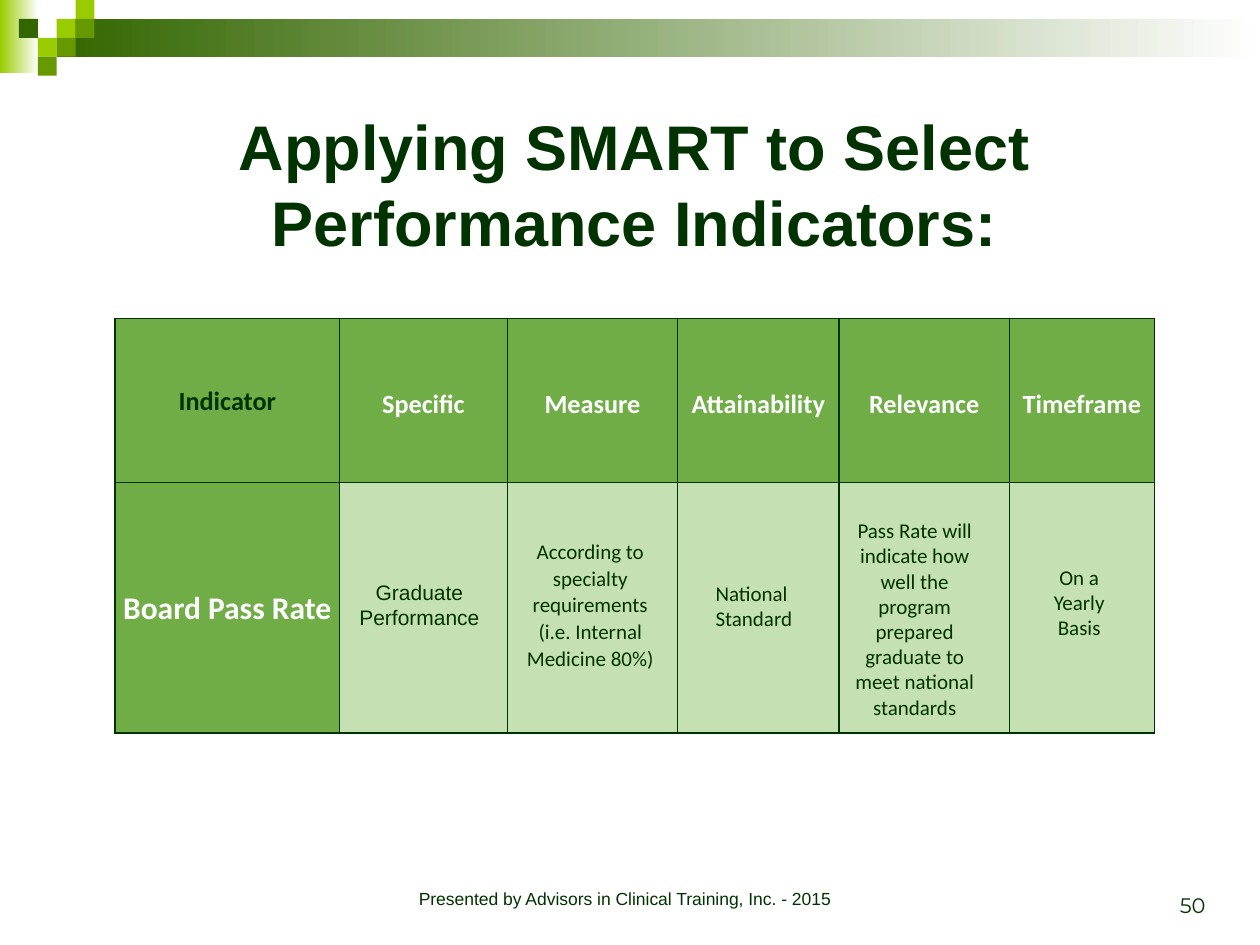
from lxml.etree import SubElement
from pptx import Presentation
from pptx.dml.color import RGBColor
from pptx.enum.shapes import MSO_SHAPE as Shape
from pptx.enum.text import MSO_ANCHOR as Anchor, MSO_AUTO_SIZE as AutoSize, PP_ALIGN as Align
from pptx.oxml.ns import qn
from pptx.util import Pt

DARK, GREEN, PALE, WHITE = "003300", "70AD47", "C5E0B3", "FFFFFF"
LIME, OLIVE, FOREST = "99CC00", "669900", "336600"


def rgb(value):
    return RGBColor.from_string(value)


class Deck:
    def __init__(self, width, height):
        self.prs = Presentation()
        self.prs.slide_width, self.prs.slide_height = Pt(width), Pt(height)
        self.s = self.prs.slides.add_slide(self.prs.slide_layouts[5])

    def set_text(self, tf, text, size, font="Calibri", color=DARK, bold=False,
                 align=Align.CENTER, spacing=1):
        tf.text = text
        tf.word_wrap = True
        for p in tf.paragraphs:
            p.alignment, p.line_spacing = align, spacing
            for r in p.runs:
                r.font.size, r.font.name, r.font.bold = Pt(size), font, bold
                r.font.color.rgb = rgb(color)

    def title(self, box, text, size):
        sp = self.s.shapes.title
        sp.left, sp.top, sp.width, sp.height = map(Pt, box)
        tf = sp.text_frame
        self.set_text(tf, text, size, "Arial", bold=True)
        tf.auto_size, tf.vertical_anchor = AutoSize.NONE, Anchor.MIDDLE

    def rect(self, box, *colors):
        sp = self.s.shapes.add_shape(Shape.RECTANGLE, *map(Pt, box))
        sp.shadow.inherit = False
        sp.line.fill.background()
        if len(colors) == 1:
            sp.fill.solid()
            sp.fill.fore_color.rgb = rgb(colors[0])
        else:
            sp.fill.gradient()
            sp.fill.gradient_angle = 0
            for stop, color in zip(sp.fill.gradient_stops, colors):
                stop.color.rgb = rgb(color)

    def text(self, box, text, size, anchor=Anchor.TOP, **style):
        tf = self.s.shapes.add_textbox(*map(Pt, box)).text_frame
        self.set_text(tf, text, size, **style)
        tf.vertical_anchor = anchor

    def border(self, cell):
        tc_pr = cell._tc.get_or_add_tcPr()
        for side in ("lnL", "lnR", "lnT", "lnB"):
            ln = SubElement(tc_pr, qn(f"a:{side}"), w=str(Pt(1)))
            SubElement(SubElement(ln, qn("a:solidFill")), qn("a:srgbClr"), val=DARK)

    def table(self, left, top, widths, heights, headers, label):
        frame = self.s.shapes.add_table(len(heights), len(widths), Pt(left), Pt(top),
                                        Pt(sum(widths)), Pt(sum(heights)))
        tbl = frame.table
        for column, width in zip(tbl.columns, widths):
            column.width = Pt(width)
        for row, height in zip(tbl.rows, heights):
            row.height = Pt(height)
        for cell in tbl.iter_cells():
            self.border(cell)
            cell.fill.solid()
            cell.fill.fore_color.rgb = rgb(PALE)
        labelled = [(tbl.cell(0, c), text, 15) for c, text in enumerate(headers)]
        labelled.append((tbl.cell(1, 0), label, 18))
        for i, (cell, text, size) in enumerate(labelled):
            cell.fill.fore_color.rgb = rgb(GREEN)
            cell.vertical_anchor = Anchor.MIDDLE
            cell.margin_left = cell.margin_right = Pt(3)
            cell.margin_top = Pt(3 if 0 < i < len(headers) else 0)
            cell.margin_bottom = Pt(0)
            self.set_text(cell.text_frame, text, size, color=WHITE if i else DARK,
                          bold=True, spacing=1.07)


def main():
    deck = Deck(720, 540)
    unit = 10.8
    deck.rect((0, 0, 22, 41.8), LIME, WHITE)
    deck.rect((3 * unit, unit, 720 - 3 * unit, 2 * unit), FOREST, WHITE)
    squares = [(3, 1, LIME), (4, 0, LIME), (4, 1, OLIVE), (2, 2, LIME),
               (1, 1, FOREST), (3, 2, OLIVE), (2, 3, OLIVE)]
    for column, row, color in squares:
        deck.rect((column * unit, row * unit, unit, unit), color)

    deck.title((34.5, 67, 656, 75.6), "Applying SMART to Select Performance Indicators:", 36)
    deck.table(65.7, 182, (128.4, 95.8, 97.4, 92.2, 97.4, 82.8), (93.6, 143.3),
               ("Indicator", "Specific", "Measure", "Attainability", "Relevance", "Timeframe"),
               "Board Pass Rate")

    deck.text((195.8, 327.6, 87.8, 36), "Graduate Performance", 12, font="Arial")
    deck.text((293.8, 303, 87, 97),
              "According to specialty requirements\n(i.e. Internal Medicine 80%)", 12, spacing=1.07)
    deck.text((401.8, 328.3, 62.6, 51), "National Standard", 12, align=Align.LEFT)
    deck.text((475.2, 292.3, 95, 124),
              "Pass Rate will indicate how well the program prepared graduate to meet "
              "national standards", 12)
    deck.text((589, 319, 55.4, 65.5), "On a Yearly Basis", 12)

    deck.text((198, 504, 318, 24), "Presented by Advisors in Clinical Training, Inc. - 2015",
              10, font="Arial")
    deck.text((528, 492, 168, 36), "50", 12, Anchor.BOTTOM, font="Montserrat", align=Align.RIGHT)
    deck.prs.save("out.pptx")


if __name__ == "__main__":
    main()
